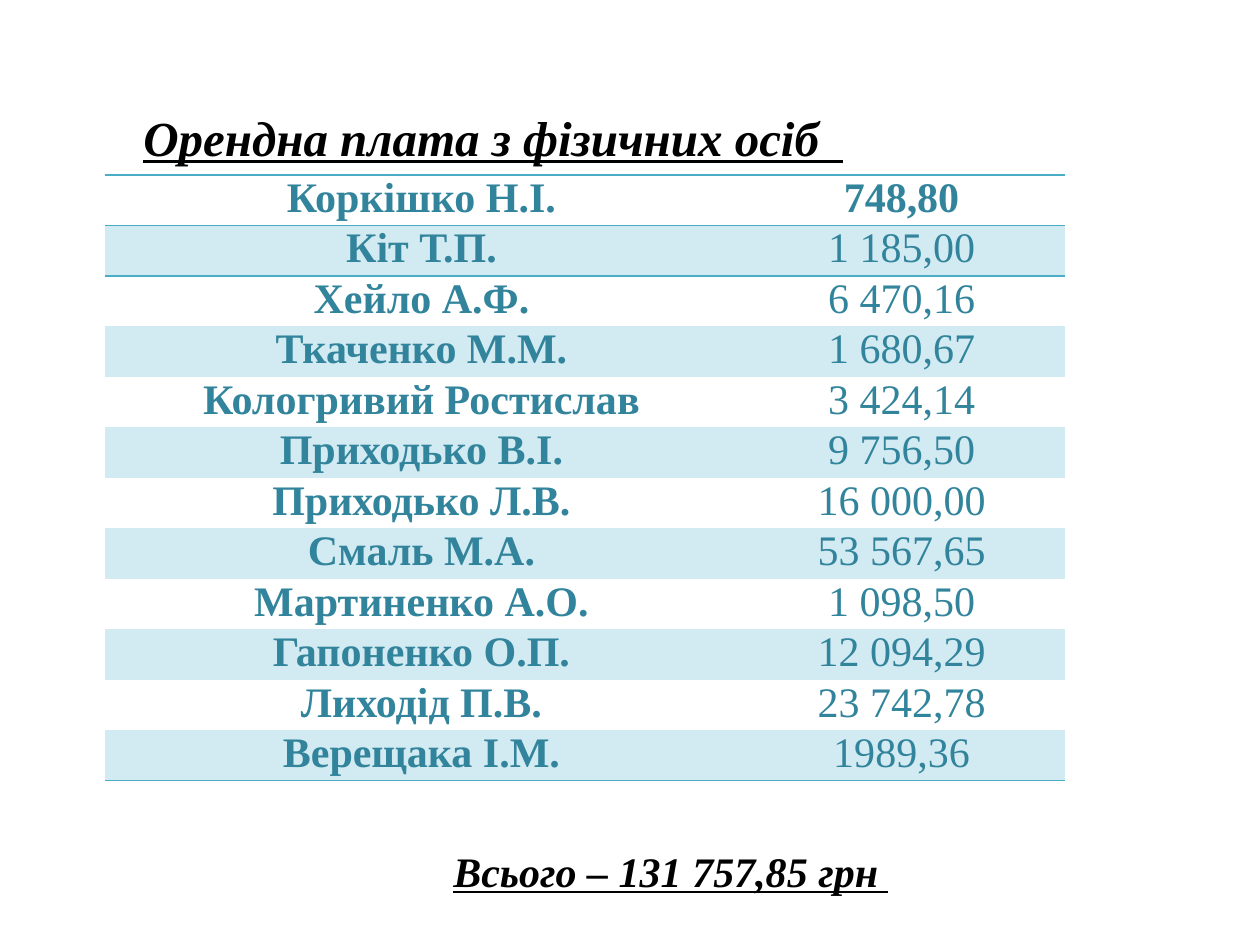
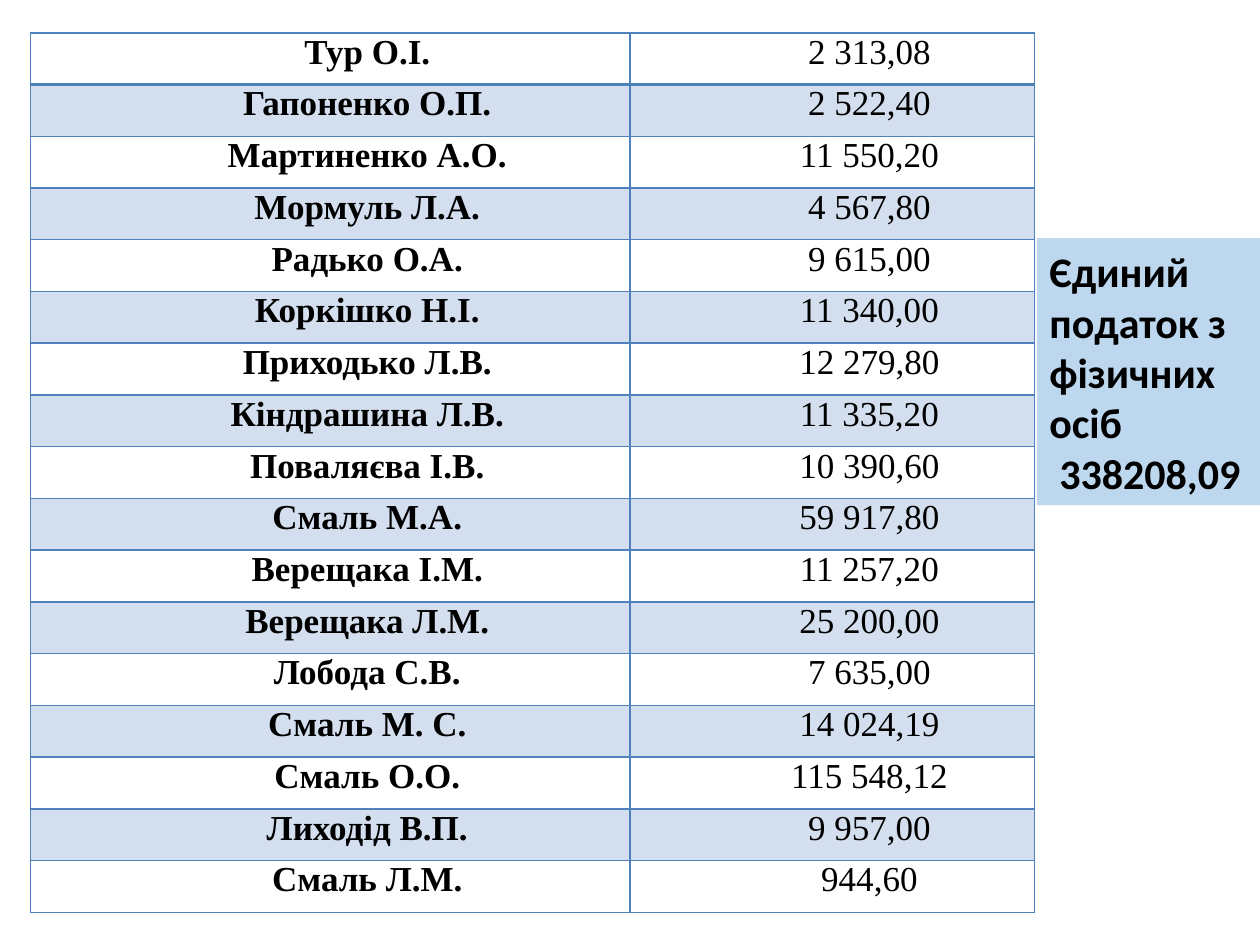
from dataclasses import dataclass
from lxml import etree
from pptx import Presentation
from pptx.dml.color import RGBColor
from pptx.enum.shapes import MSO_SHAPE
from pptx.enum.text import MSO_ANCHOR, MSO_AUTO_SIZE, PP_ALIGN
from pptx.oxml.ns import qn
from pptx.util import Inches, Pt

RECT = MSO_SHAPE.RECTANGLE
LEFT, CENTER = PP_ALIGN.LEFT, PP_ALIGN.CENTER
TOP, MIDDLE = MSO_ANCHOR.TOP, MSO_ANCHOR.MIDDLE
NO_FIT = MSO_AUTO_SIZE.NONE


@dataclass(frozen=True)
class Theme:
    serif: str = "Times New Roman"
    sans: str = "Calibri"
    ink: str = "000000"
    teal: str = "31849B"
    rule: str = "4BACC6"
    mint: str = "D2EAF1"
    blue: str = "4F81BD"
    pale: str = "D3DFEE"
    panel: str = "BDD7EE"
    title: int = 28
    body: int = 24
    small: int = 20
    bare: str = "{2D5ABB26-0587-4C30-8999-92F81FD0307C}"


theme = Theme()

deck = Presentation()
deck.slide_width, deck.slide_height = Inches(10), Inches(7.5)
# Grid of 100 columns by 100 rows
col, row = deck.slide_width / 100, deck.slide_height / 100


def style(para, face, size, color, bold=True, slant=False, align=LEFT, indent=0):
    """Format a paragraph and its runs."""
    para.alignment = align
    props = para._p.get_or_add_pPr()
    props.set("marL", str(Inches(indent)))
    props.set("indent", "0")
    for run in para.runs:
        font = run.font
        font.name, font.size, font.bold = face, Pt(size), bold
        font.italic = font.underline = slant
        font.color.rgb = RGBColor.from_string(color)


def edge(cell, side, color, width):
    """Draw one border of a cell; call in the order L, R, T, B."""
    line = etree.SubElement(cell._tc.get_or_add_tcPr(), qn("a:ln" + side), w=str(Pt(width)))
    fill = etree.SubElement(line, qn("a:solidFill"))
    etree.SubElement(fill, qn("a:srgbClr"), val=color)


rent = [
    ("Коркішко Н.І.", "748,80"),
    ("Кіт Т.П.", "1 185,00"),
    ("Хейло А.Ф.", "6 470,16"),
    ("Ткаченко М.М.", "1 680,67"),
    ("Кологривий Ростислав", "3 424,14"),
    ("Приходько В.І.", "9 756,50"),
    ("Приходько Л.В.", "16 000,00"),
    ("Смаль М.А.", "53 567,65"),
    ("Мартиненко А.О.", "1 098,50"),
    ("Гапоненко О.П.", "12 094,29"),
    ("Лиходід П.В.", "23 742,78"),
    ("Верещака І.М.", "1989,36"),
]
tax = [
    ("Тур О.І.", "2 313,08"),
    ("Гапоненко О.П.", "2 522,40"),
    ("Мартиненко А.О.", "11 550,20"),
    ("Мормуль Л.А.", "4 567,80"),
    ("Радько О.А.", "9 615,00"),
    ("Коркішко Н.І.", "11 340,00"),
    ("Приходько Л.В.", "12 279,80"),
    ("Кіндрашина Л.В.", "11 335,20"),
    ("Поваляєва І.В.", "10 390,60"),
    ("Смаль М.А.", "59 917,80"),
    ("Верещака І.М.", "11 257,20"),
    ("Верещака Л.М.", "25 200,00"),
    ("Лобода С.В.", "7 635,00"),
    ("Смаль М. С.", "14 024,19"),
    ("Смаль О.О.", "115 548,12"),
    ("Лиходід В.П.", "9 957,00"),
    ("Смаль Л.М.", "944,60"),
]

# Tables: data, left, top, column widths, row height, size, ink, band, rule, full grid
plans = [
    (rent, 8.3, 18.53, (44.4, 31.8), 5.34, theme.body, theme.teal, theme.mint, theme.rule, False),
    (tax, 2.4, 3.47, (47.6, 32.1), 5.48, theme.small, theme.ink, theme.pale, theme.blue, True),
]
slides = []
for data, left, top, widths, high, size, ink, band, rule, grid in plans:
    slide = deck.slides.add_slide(deck.slide_layouts[6])
    slides.append(slide)
    frame = slide.shapes.add_table(
        len(data), 2, int(left * col), int(top * row),
        int(sum(widths) * col), int(high * len(data) * row))
    table = frame.table
    table.first_row = table.horz_banding = False
    frame.element.xpath(".//a:tableStyleId")[0].text = theme.bare
    for part, width in zip(table.columns, widths):
        part.width = int(width * col)
    for r, pair in enumerate(data):
        table.rows[r].height = int(high * row)
        for c, text in enumerate(pair):
            cell = table.cell(r, c)
            cell.margin_left = cell.margin_right = Inches(0.07)
            cell.margin_top = cell.margin_bottom = 0
            cell.vertical_anchor = TOP
            para = cell.text_frame.paragraphs[0]
            para.text = text
            bold = c == 0 or (r == 0 and not grid)
            style(para, theme.serif, size, ink, bold, align=CENTER, indent=0.59)
            # Borders: a full grid, or rules around the first row and at the end
            if grid:
                edge(cell, "L", rule, 1)
                edge(cell, "R", rule, 1)
            if grid or r < 2:
                edge(cell, "T", rule, 2.25 if grid and r == 1 else 1)
            if grid or r in (0, len(data) - 1):
                edge(cell, "B", rule, 2.25 if grid and r == 0 else 1)
            if r % 2:
                cell.fill.solid()
                cell.fill.fore_color.rgb = RGBColor.from_string(band)
            else:
                cell.fill.background()

# Rent: title and total
notes = [
    ("Орендна плата з фізичних осіб  ", 10.4, 10.67, 58.3, 7.6, theme.title, True),
    ("Всього – 131 757,85 грн ", 35, 88.8, 36.9, 6.67, theme.body, False),
]
for text, left, top, width, high, size, wrap in notes:
    box = slides[0].shapes.add_textbox(
        int(left * col), int(top * row), int(width * col), int(high * row))
    box.text_frame.word_wrap = wrap
    para = box.text_frame.paragraphs[0]
    para.text = text
    style(para, theme.serif, size, theme.ink, slant=True)

# Tax: side panel with the total
panel = slides[1].shapes.add_shape(
    RECT, int(82.3 * col), int(25.2 * row), int(17.7 * col), int(28.27 * row))
panel.shadow.inherit = False
panel.fill.solid()
panel.fill.fore_color.rgb = RGBColor.from_string(theme.panel)
panel.line.fill.background()
body = panel.text_frame
body.word_wrap, body.auto_size, body.vertical_anchor = True, NO_FIT, MIDDLE
body.text = "Єдиний податок з фізичних осіб\n338208,09"
for para, indent in zip(body.paragraphs, (0, 0.08)):
    style(para, theme.sans, theme.body, theme.ink, indent=indent)

deck.save("out.pptx")
